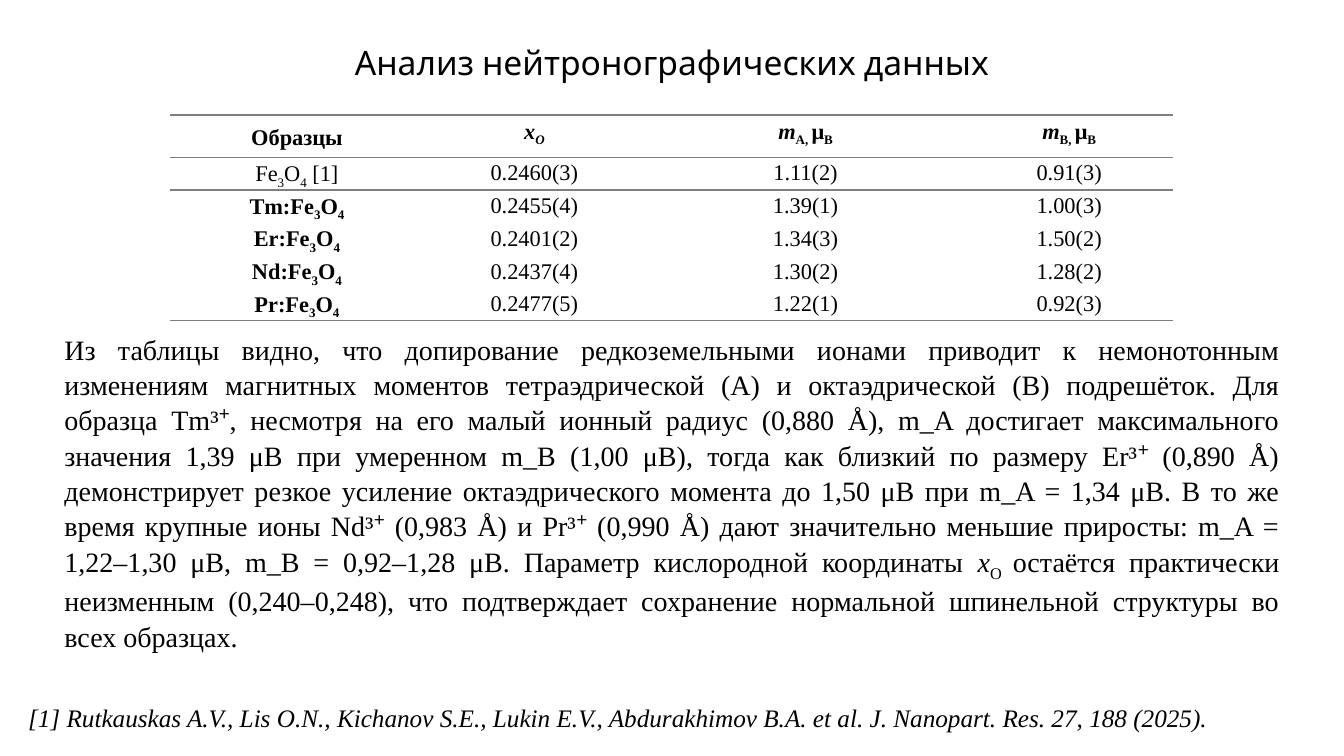
from lxml.etree import SubElement
from pptx import Presentation
from pptx.dml.color import RGBColor
from pptx.enum.text import MSO_ANCHOR, MSO_AUTO_SIZE, PP_ALIGN
from pptx.oxml.ns import qn
from pptx.util import Inches, Pt

SERIF = "Times New Roman"
BLACK = "000000"
RULE_GRAY = "7F7F7F"
NO_STYLE_NO_GRID = "{2D5ABB26-0587-4C30-8999-92F81FD0307C}"


def color(hex_string):
    return RGBColor.from_string(hex_string)


def add_runs(paragraph, runs, size, font_name=SERIF):
    """Add (text, style) runs; style holds b for bold, i for italic, _ for subscript."""
    for text, style in runs:
        run = paragraph.add_run()
        run.text = text
        run.font.name = font_name
        run.font.size = Pt(size)
        run.font.color.rgb = color(BLACK)
        run.font.bold = "b" in style
        run.font.italic = "i" in style
        if "_" in style:
            run._r.get_or_add_rPr().set("baseline", "-25000")


presentation = Presentation()
presentation.slide_width = Inches(13.33)
presentation.slide_height = Inches(7.5)
slide = presentation.slides.add_slide(presentation.slide_layouts[6])

# Title, discussion and reference
discussion = (
    "Из таблицы видно, что допирование редкоземельными ионами приводит к немонотонным "
    "изменениям магнитных моментов тетраэдрической (A) и октаэдрической (B) подрешёток. "
    "Для образца Tm³⁺, несмотря на его малый ионный радиус (0,880 Å), m_A достигает "
    "максимального значения 1,39 μB при умеренном m_B (1,00 μB), тогда как близкий по "
    "размеру Er³⁺ (0,890 Å) демонстрирует резкое усиление октаэдрического момента до "
    "1,50 μB при m_A = 1,34 μB. В то же время крупные ионы Nd³⁺ (0,983 Å) и Pr³⁺ "
    "(0,990 Å) дают значительно меньшие приросты: m_A = 1,22–1,30 μB, m_B = 0,92–1,28 μB. "
    "Параметр кислородной координаты "
)
conclusion = (
    "остаётся практически неизменным (0,240–0,248), что подтверждает сохранение "
    "нормальной шпинельной структуры во всех образцах."
)
reference = (
    "[1] Rutkauskas A.V., Lis O.N., Kichanov S.E., Lukin E.V., Abdurakhimov B.A. et al. "
    "J. Nanopart. Res. 27, 188 (2025)."
)
text_blocks = [
    ((3.32, 0.37, 6.69, 0.5), PP_ALIGN.CENTER, 1.0, 24, "Karla",
     [("Анализ нейтронографических данных", "")]),
    ((0.54, 3.23, 12.25, 3.1), PP_ALIGN.JUSTIFY, 1.05, 20, SERIF,
     [(discussion, ""), ("x", "i"), ("O ", "_"), (conclusion, "")]),
    ((0.18, 6.92, 13.11, 0.4), PP_ALIGN.LEFT, 1.0, 18, SERIF, [(reference, "i")]),
]
for place, alignment, line_spacing, size, font_name, runs in text_blocks:
    text_frame = slide.shapes.add_textbox(*map(Inches, place)).text_frame
    text_frame.word_wrap = True
    text_frame.auto_size = MSO_AUTO_SIZE.NONE
    paragraph = text_frame.paragraphs[0]
    paragraph.alignment = alignment
    paragraph.line_spacing = line_spacing
    add_runs(paragraph, runs, size, font_name)

# Table of refined parameters
header = [
    [("Образцы", "b")],
    [("x", "bi"), ("O", "bi_")],
    [("m", "bi"), ("A, ", "b_"), ("μ", "b"), ("B", "b_")],
    [("m", "bi"), ("B, ", "b_"), ("μ", "b"), ("B", "b_")],
]
samples = [
    ("Fe", "0.2460(3)", "1.11(2)", "0.91(3)"),
    ("Tm:Fe", "0.2455(4)", "1.39(1)", "1.00(3)"),
    ("Er:Fe", "0.2401(2)", "1.34(3)", "1.50(2)"),
    ("Nd:Fe", "0.2437(4)", "1.30(2)", "1.28(2)"),
    ("Pr:Fe", "0.2477(5)", "1.22(1)", "0.92(3)"),
]
rows = [header]
for prefix, *values in samples:
    weight = "b" if ":" in prefix else ""
    formula = [(prefix, weight), ("3", weight + "_"), ("O", weight), ("4", weight + "_")]
    if not weight:
        formula.append((" [1]", ""))
    rows.append([formula] + [[(value, "")] for value in values])

column_widths = [2.02, 2.69, 2.69, 2.54]
row_heights = [0.42] + [0.21] * len(samples)
table = slide.shapes.add_table(
    len(rows), len(column_widths), Inches(1.69), Inches(1.14),
    Inches(sum(column_widths)), Inches(sum(row_heights)),
).table
table.first_row = False
table.horz_banding = False
table._tbl.tblPr.find(qn("a:tableStyleId")).text = NO_STYLE_NO_GRID
for column, width in zip(table.columns, column_widths):
    column.width = Inches(width)

ruled_edges = {0: ("a:lnT", "a:lnB"), 1: ("a:lnT",), len(samples): ("a:lnB",)}
for row_index, row in enumerate(rows):
    table.rows[row_index].height = Inches(row_heights[row_index])
    for column_index, runs in enumerate(row):
        cell = table.cell(row_index, column_index)
        cell.margin_left = cell.margin_right = Inches(0.07)
        cell.margin_top = cell.margin_bottom = 0
        cell.vertical_anchor = MSO_ANCHOR.TOP if column_index else MSO_ANCHOR.MIDDLE
        for edge in ruled_edges.get(row_index, ()):
            line = SubElement(cell._tc.get_or_add_tcPr(), qn(edge), w=str(Pt(1)))
            fill = SubElement(line, qn("a:solidFill"))
            SubElement(fill, qn("a:srgbClr"), val=RULE_GRAY)
        cell.fill.background()
        paragraph = cell.text_frame.paragraphs[0]
        paragraph.alignment = PP_ALIGN.CENTER
        paragraph.line_spacing = 1.15
        properties = paragraph._p.get_or_add_pPr()
        properties.set("marL", "0")
        properties.set("indent", str(Inches(0.49)))
        add_runs(paragraph, runs, 16)

presentation.save("out.pptx")
